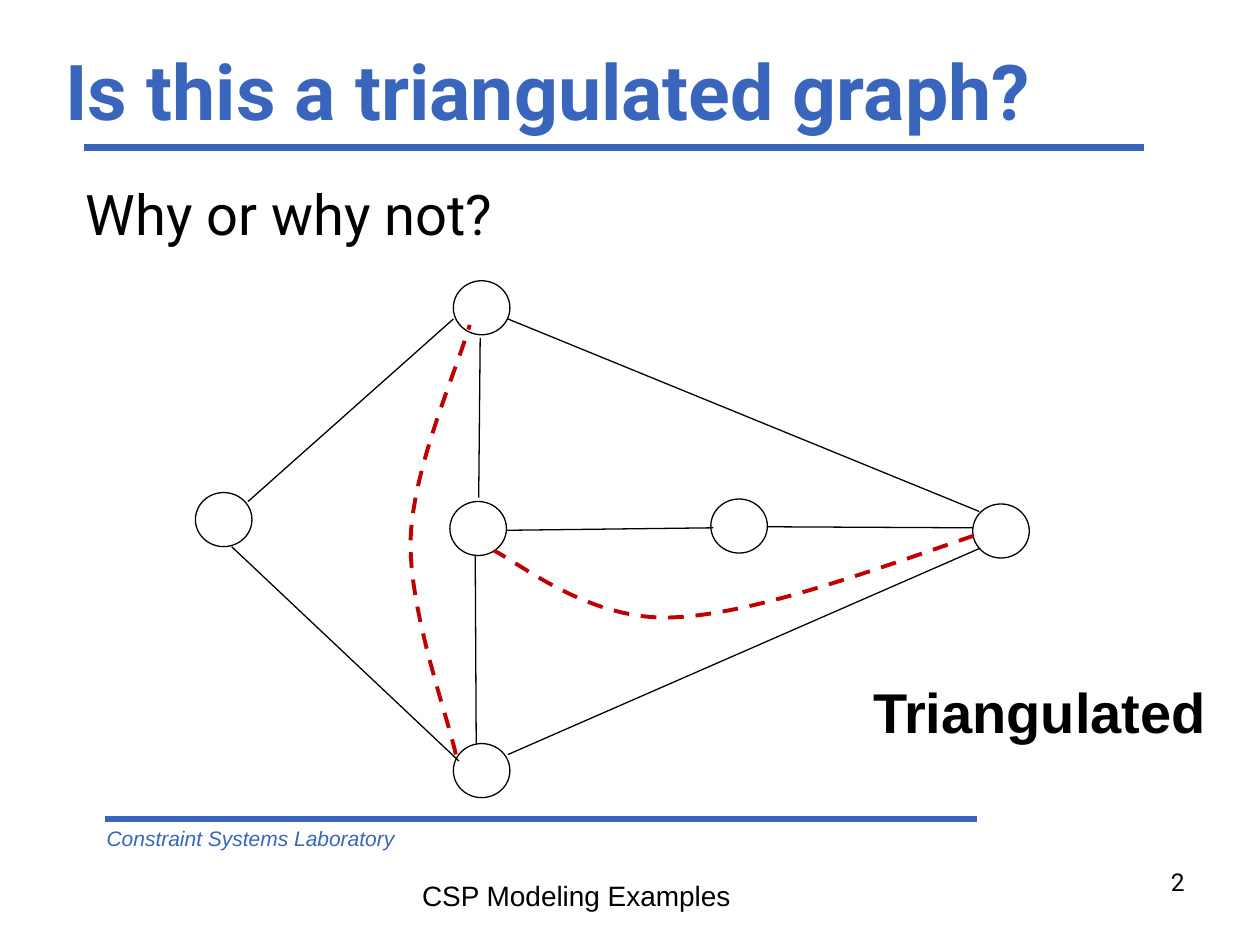
from lxml.etree import SubElement
from pptx import Presentation
from pptx.dml.color import RGBColor
from pptx.enum.dml import MSO_LINE
from pptx.enum.shapes import MSO_CONNECTOR, MSO_SHAPE
from pptx.enum.text import MSO_ANCHOR, PP_ALIGN
from pptx.oxml.ns import qn
from pptx.util import Cm, Pt

BLUE, BLACK, RED = "3A65BC", "000000", "C00000"

deck = Presentation()
deck.slide_width, deck.slide_height = Cm(25.4), Cm(19.05)
slide = deck.slides.add_slide(deck.slide_layouts[6])
shapes = slide.shapes


def stroke(line, color, width):
    line.color.rgb = RGBColor.from_string(color)
    line.width = Pt(width)


def write(text, box, size, font="Arial", color=BLACK, bold=False,
          italic=False, align=PP_ALIGN.LEFT, anchor=MSO_ANCHOR.TOP):
    frame = shapes.add_textbox(*[Cm(v) for v in box]).text_frame
    frame.word_wrap = True
    frame.vertical_anchor = anchor
    para = frame.paragraphs[0]
    para.alignment = align
    run = para.add_run()
    run.text = text
    run.font.name, run.font.size = font, Pt(size)
    run.font.bold, run.font.italic = bold, italic
    run.font.color.rgb = RGBColor.from_string(color)


# Text
write("Constraint Systems Laboratory", (1.9, 16.51, 13.34, 0.76), 12,
      color=BLUE, italic=True)
write("CSP Modeling Examples", (8.26, 17.58, 9.09, 0.94), 16)
write("Is this a triangulated graph?", (1.07, 0.85, 22.86, 1.9), 44,
      font="Roboto", color=BLUE, bold=True, anchor=MSO_ANCHOR.MIDDLE)
write("Why or why not?", (1.48, 3.5, 22.65, 12.57), 32, font="Roboto")
write("2", (18.2, 17.35, 5.93, 1.32), 14, font="Roboto", align=PP_ALIGN.RIGHT)

# Graph nodes: left, top
nodes = [(9.14, 5.66), (9.07, 10.11), (19.61, 10.16),
         (14.33, 10.06), (9.14, 14.99), (3.94, 9.93)]
for left, top in nodes:
    node = shapes.add_shape(MSO_SHAPE.OVAL, Cm(left), Cm(top), Cm(1.14), Cm(1.09))
    node.shadow.inherit = False
    node.fill.background()
    stroke(node.line, BLACK, 0.75)

# Title and footer rules, then graph edges: x1, y1, x2, y2
rules = [(1.7, 2.97, 23.06, 2.97), (2.11, 16.51, 19.69, 16.51)]
edges = [(5, 10.11, 9.14, 6.43), (4.67, 11.02, 9.25, 15.34),
         (10.24, 15.21, 19.76, 11.05), (15.47, 10.62, 19.61, 10.64),
         (10.24, 6.43, 19.74, 10.31), (9.6, 15.01, 9.58, 11.18),
         (9.65, 10.03, 9.68, 6.81), (14.38, 10.64, 10.21, 10.69)]
for group, color, width in [(rules, BLUE, 4), (edges, BLACK, 0.75)]:
    for ends in group:
        edge = shapes.add_connector(MSO_CONNECTOR.STRAIGHT, *[Cm(v) for v in ends])
        stroke(edge.line, color, width)
        SubElement(edge._element.spPr, qn("a:effectLst"))

# Dashed chords: two joined cubic curves each, drawn through short steps
chords = [
    [(19.63, 10.8), (17.37, 11.58), (15.11, 12.4), (13.51, 12.45),
     (11.89, 12.5), (10.54, 11.4), (9.96, 11.1)],
    [(9.19, 15.21), (9.04, 14.48), (8.23, 12.29), (8.28, 10.85),
     (8.33, 9.4), (9.22, 7.44), (9.47, 6.55)],
]
STEPS = 24
for chord in chords:
    points = []
    for first in (0, 3):
        curve = chord[first:first + 4]
        for step in range(1, STEPS + 1):
            t = step / STEPS
            parts = ((1 - t) ** 3, 3 * t * (1 - t) ** 2, 3 * t * t * (1 - t), t ** 3)
            points.append([Cm(sum(p * c[axis] for p, c in zip(parts, curve)))
                           for axis in (0, 1)])
    pen = shapes.build_freeform(Cm(chord[0][0]), Cm(chord[0][1]))
    pen.add_line_segments(points, close=False)
    arc = pen.convert_to_shape()
    arc.shadow.inherit = False
    arc.fill.background()
    stroke(arc.line, RED, 2.25)
    arc.line.dash_style = MSO_LINE.DASH

# Answer
write("Triangulated", (17.35, 13.54, 8.05, 1.63), 32, bold=True)

deck.save("out.pptx")
